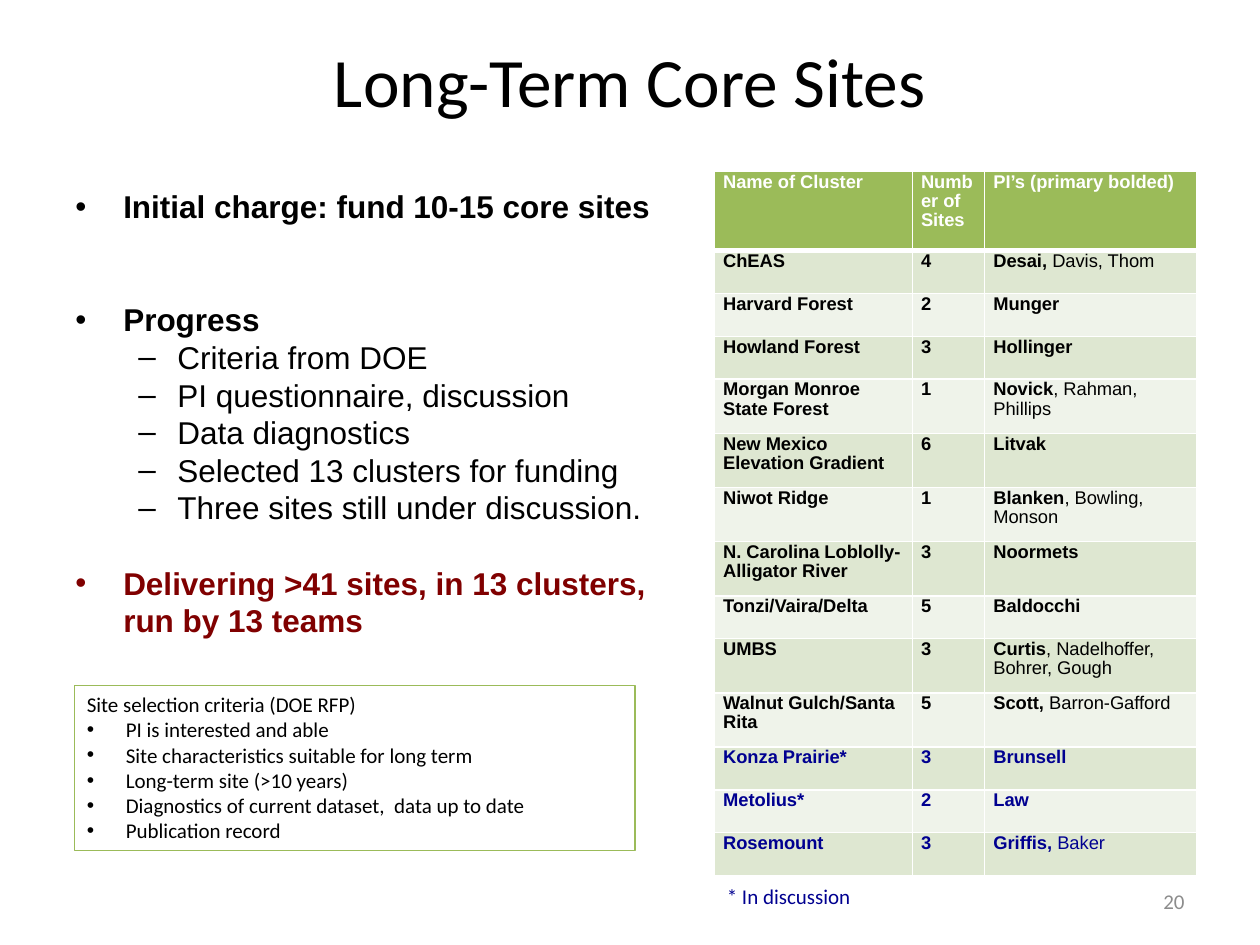
from lxml.etree import SubElement
from pptx import Presentation
from pptx.dml.color import RGBColor as RGB
from pptx.enum.shapes import MSO_SHAPE as SHAPE
from pptx.enum.text import MSO_ANCHOR as ANCHOR, PP_ALIGN as ALIGN
from pptx.oxml.ns import qn
from pptx.util import Inches, Pt

COLORS = {"black": "000000", "white": "FFFFFF", "green": "9BBB59", "band": "DEE7D1",
          "pale": "EFF3EA", "navy": "000090", "maroon": "800000", "gray": "8C8C8C"}
COLS, ROWS = 100, 75
BODY_LINE = 21.5

PROGRESS = ["Criteria from DOE", "PI questionnaire, discussion", "Data diagnostics",
            "Selected 13 clusters for funding", "Three sites still under discussion."]
CRITERIA = ["PI is interested and able", "Site characteristics suitable for long term",
            "Long-term site (>10 years)", "Diagnostics of current dataset,  data up to date",
            "Publication record"]
HEADERS = ["Name of Cluster", "Number of Sites", "PI’s (primary bolded)"]
CLUSTERS = [
    ("ChEAS", 4, "Desai,", " Davis, Thom"),
    ("Harvard Forest", 2, "Munger", ""),
    ("Howland Forest", 3, "Hollinger", ""),
    ("Morgan Monroe State Forest", 1, "Novick", ", Rahman, Phillips"),
    ("New Mexico Elevation Gradient", 6, "Litvak", ""),
    ("Niwot Ridge", 1, "Blanken", ", Bowling, Monson"),
    ("N. Carolina Loblolly- Alligator River", 3, "Noormets", ""),
    ("Tonzi/Vaira/Delta", 5, "Baldocchi", ""),
    ("UMBS", 3, "Curtis", ", Nadelhoffer, Bohrer, Gough"),
    ("Walnut Gulch/Santa Rita", 5, "Scott, ", "Barron-Gafford"),
    ("Konza Prairie*", 3, "Brunsell", ""),
    ("Metolius*", 2, "Law", ""),
    ("Rosemount", 3, "Griffis, ", "Baker"),
]
DISCUSSED = 10


def rgb(name):
    """Return the named colour."""
    return RGB.from_string(COLORS[name])


def grid(*units):
    """Turn grid columns or rows into lengths."""
    return [Inches(u / 10) for u in units]


def add_text(p, text, size=12, font="Calibri", color="black", bold=False, align=None,
             bullet=None, indent=(0, 0), level=0, before=0, after=0, line=None):
    """Append a formatted run to a paragraph and set the paragraph's format."""
    r = p.add_run()
    r.text = text
    r.font.size, r.font.name, r.font.bold = Pt(size), font, bold
    r.font.color.rgb = rgb(color)
    p.alignment, p.level = align, level
    p.space_before, p.space_after, p.line_spacing = Pt(before), Pt(after), line
    if bullet:
        ppr = p._p.get_or_add_pPr()
        left, first = (Inches(v) for v in indent)
        ppr.set("marL", str(left))
        ppr.set("indent", str(first))
        SubElement(ppr, qn("a:buFont"), typeface="Arial")
        SubElement(ppr, qn("a:buChar"), char=bullet)


def next_paragraph(tf):
    """Return the empty first paragraph, or a new one."""
    p = tf.paragraphs[0]
    return tf.add_paragraph() if p.runs else p


def text_frame(slide, box, anchor=ANCHOR.TOP):
    """Add a wrapping text box and return its frame."""
    tf = slide.shapes.add_textbox(*grid(*box)).text_frame
    tf.word_wrap, tf.vertical_anchor = True, anchor
    return tf


def add_label(slide, box, text, anchor=ANCHOR.MIDDLE, **fmt):
    """Place one line of text in a box."""
    add_text(text_frame(slide, box, anchor).paragraphs[0], text, **fmt)


def add_body(slide, box):
    """Place the charge, progress and delivery bullets."""
    tf = text_frame(slide, box)
    base = dict(size=18, font="Arial", line=Pt(BODY_LINE))
    main = dict(base, bold=True, bullet="•", indent=(0.38, -0.38))
    sub = dict(base, bullet="–", indent=(0.81, -0.31), level=1)
    items = [("Initial charge: fund 10-15 core sites", main),
             ("Progress", dict(main, before=2 * BODY_LINE)),
             *((text, sub) for text in PROGRESS),
             ("Delivering >41 sites, in 13 clusters, run by 13 teams",
              dict(main, color="maroon", before=BODY_LINE))]
    for text, fmt in items:
        add_text(next_paragraph(tf), text, **fmt)


def add_criteria(slide, box):
    """Place the outlined box of selection criteria."""
    sp = slide.shapes.add_shape(SHAPE.RECTANGLE, *grid(*box))
    sp.shadow.inherit = False
    sp.fill.solid()
    sp.fill.fore_color.rgb = rgb("white")
    sp.line.color.rgb, sp.line.width = rgb("green"), Pt(0.75)
    tf = sp.text_frame
    tf.word_wrap, tf.vertical_anchor = True, ANCHOR.TOP
    add_text(next_paragraph(tf), "Site selection criteria (DOE RFP)", align=ALIGN.LEFT)
    for text in CRITERIA:
        add_text(next_paragraph(tf), text, align=ALIGN.LEFT, bullet="•", indent=(0.31, -0.31))


def fill_cell(cell, runs, fill, color, bottom=1):
    """Write bold and plain runs into a cell with white borders."""
    tcpr = cell._tc.get_or_add_tcPr()
    for side, width in (("L", 1), ("R", 1), ("T", 1), ("B", bottom)):
        ln = SubElement(tcpr, qn(f"a:ln{side}"), w=str(Pt(width)))
        SubElement(SubElement(ln, qn("a:solidFill")), qn("a:srgbClr"), val=COLORS["white"])
    cell.fill.solid()
    cell.fill.fore_color.rgb = rgb(fill)
    cell.margin_left = cell.margin_right = Inches(0.07)
    cell.margin_top, cell.margin_bottom = Inches(0.01), 0
    for text, bold in runs:
        if text:
            add_text(cell.text_frame.paragraphs[0], text, size=10.5, font="Arial",
                     color=color, bold=bold, before=4, after=4, line=0.95)


def add_clusters(slide, box):
    """Place the table of clusters, with taller rows for long entries."""
    table = slide.shapes.add_table(len(CLUSTERS) + 1, len(HEADERS), *grid(*box)).table
    table.first_row = table.horz_banding = False
    for col, share in zip(table.columns, (0.41, 0.15, 0.44)):
        col.width = grid(box[2] * share)[0]
    table.rows[0].height = grid(6.3)[0]
    for c, text in enumerate(HEADERS):
        fill_cell(table.cell(0, c), [(text, True)], "green", "white", bottom=3)
    for i, (name, count, lead, others) in enumerate(CLUSTERS):
        tall = max(len(name), len(lead + others)) > 18
        table.rows[i + 1].height = grid(4.3 if tall else 3.4)[0]
        fill = "pale" if i % 2 else "band"
        color = "navy" if i >= DISCUSSED else "black"
        cells = [[(name, True)], [(str(count), True)], [(lead, True), (others, False)]]
        for c, runs in enumerate(cells):
            fill_cell(table.cell(i + 1, c), runs, fill, color)


def main():
    """Build the slide and save it."""
    prs = Presentation()
    prs.slide_width, prs.slide_height = grid(COLS, ROWS)
    slide = prs.slides.add_slide(prs.slide_layouts[6])
    add_label(slide, (5, 3, 90, 6.7), "Long-Term Core Sites", size=39.6, align=ALIGN.CENTER)
    add_label(slide, (71.7, 69.5, 23.3, 4), "20", color="gray", align=ALIGN.RIGHT)
    add_criteria(slide, (5.9, 54.4, 44.5, 13.1))
    add_body(slide, (5, 14.4, 50.5, 34.5))
    add_label(slide, (56.7, 69.6, 13.1, 3), "* In discussion", ANCHOR.TOP, color="navy")
    add_clusters(slide, (56.7, 13.6, 38.3, 55.9))
    prs.save("out.pptx")


if __name__ == "__main__":
    main()
